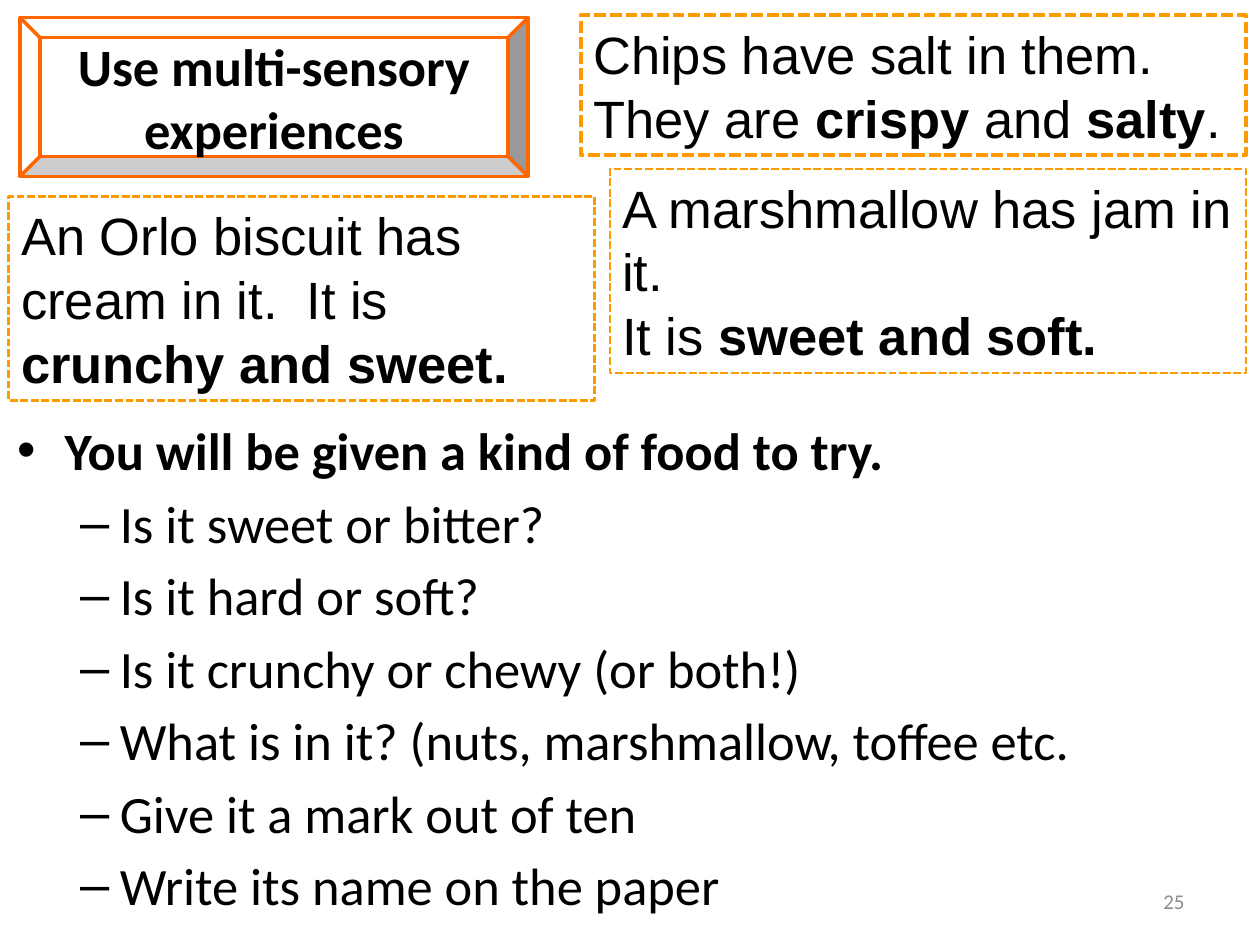
from lxml import etree
from pptx import Presentation
from pptx.dml.color import RGBColor
from pptx.enum.dml import MSO_LINE
from pptx.enum.shapes import MSO_SHAPE
from pptx.enum.text import MSO_ANCHOR, PP_ALIGN
from pptx.oxml.ns import qn
from pptx.util import Pt

BEVEL, RECTANGLE = MSO_SHAPE.BEVEL, MSO_SHAPE.RECTANGLE
DASH = MSO_LINE.SQUARE_DOT
TOP, MIDDLE = MSO_ANCHOR.TOP, MSO_ANCHOR.MIDDLE
LEFT, CENTER, RIGHT = PP_ALIGN.LEFT, PP_ALIGN.CENTER, PP_ALIGN.RIGHT


def color(value):
    return RGBColor.from_string(value)


class SlideBuilder:
    black, white, orange, amber, gray = "000000", "FFFFFF", "FF6600", "FF9900", "8C8C8C"
    heading_font, example_font = "Calibri", "Arial"
    size = 30

    def __init__(self, deck):
        self.page = deck.slides.add_slide(deck.slide_layouts[6])

    def add_span(self, para, text, font, bold=False, size=size, fill=black):
        span = para.add_run()
        span.text = text
        span.font.name = font
        span.font.size = Pt(size)
        span.font.bold = bold
        span.font.color.rgb = color(fill)

    def paragraphs(self, box, count, anchor=TOP, align=LEFT):
        frame = box.text_frame
        frame.word_wrap = True
        frame.vertical_anchor = anchor
        for _ in range(count - 1):
            frame.add_paragraph()
        for para in frame.paragraphs:
            para.alignment = align
        return frame.paragraphs

    def panel(self, kind, bounds, line, width):
        box = self.page.shapes.add_shape(kind, *map(Pt, bounds))
        box.shadow.inherit = False
        box.fill.solid()
        box.fill.fore_color.rgb = color(self.white)
        box.line.color.rgb = color(line)
        box.line.width = Pt(width)
        return box

    def title(self, bounds, text):
        box = self.panel(BEVEL, bounds, self.orange, 2)
        para = self.paragraphs(box, 1, MIDDLE, CENTER)[0]
        self.add_span(para, text, self.heading_font, True)

    def example(self, bounds, lines, width=1.5):
        box = self.panel(RECTANGLE, bounds, self.amber, width)
        box.line.dash_style = DASH
        for para, spans in zip(self.paragraphs(box, len(lines)), lines):
            para.line_spacing = Pt(36.4)
            for text, bold in spans:
                self.add_span(para, text, self.example_font, bold)

    def bullets(self, bounds, items):
        box = self.page.shapes.add_textbox(*map(Pt, bounds))
        for para, (level, text) in zip(self.paragraphs(box, len(items)), items):
            margin, indent, mark = ((27, -27, "•"), (58.5, -22.5, "–"))[level]
            para.level = level
            para.space_before = Pt(5.4)
            properties = para._p.get_or_add_pPr()
            properties.set("marL", str(Pt(margin)))
            properties.set("indent", str(Pt(indent)))
            etree.SubElement(properties, qn("a:buFont"), typeface="Arial")
            etree.SubElement(properties, qn("a:buChar"), char=mark)
            self.add_span(para, text, self.heading_font, level == 0)

    def page_number(self, bounds, text):
        box = self.page.shapes.add_textbox(*map(Pt, bounds))
        para = self.paragraphs(box, 1, MIDDLE, RIGHT)[0]
        self.add_span(para, text, self.heading_font, size=12, fill=self.gray)


def main():
    deck = Presentation()
    deck.slide_width, deck.slide_height = Pt(720), Pt(540)
    slide = SlideBuilder(deck)
    questions = [
        "Is it sweet or bitter?",
        "Is it hard or soft?",
        "Is it crunchy or chewy (or both!)",
        "What is in it? (nuts, marshmallow, toffee etc.",
        "Give it a mark out of ten",
        "Write its name on the paper",
    ]
    slide.bullets(
        (2.88, 235.5, 720, 301.7),
        [(0, "You will be given a kind of food to try.")] + [(1, text) for text in questions],
    )
    slide.title((11.5, 10.1, 290.2, 90.7), "Use multi-sensory experiences")
    slide.example(
        (331.9, 8.6, 380.2, 79.9),
        [
            [("Chips have salt in them.", False)],
            [("They are ", False), ("crispy ", True), ("and ", False), ("salty", True), (".", False)],
        ],
        2.25,
    )
    slide.example(
        (5, 112.3, 334.8, 116.6),
        [[("An Orlo biscuit has cream in it.  It is ", False), ("crunchy and sweet.", True)]],
    )
    slide.example(
        (348.5, 96.5, 363.6, 116.6),
        [
            [("A marshmallow has jam in it.", False)],
            [("It is ", False), ("sweet and soft.", True)],
        ],
    )
    slide.page_number((516.2, 500.4, 167.8, 28.8), "25")
    deck.save("out.pptx")


if __name__ == "__main__":
    main()
